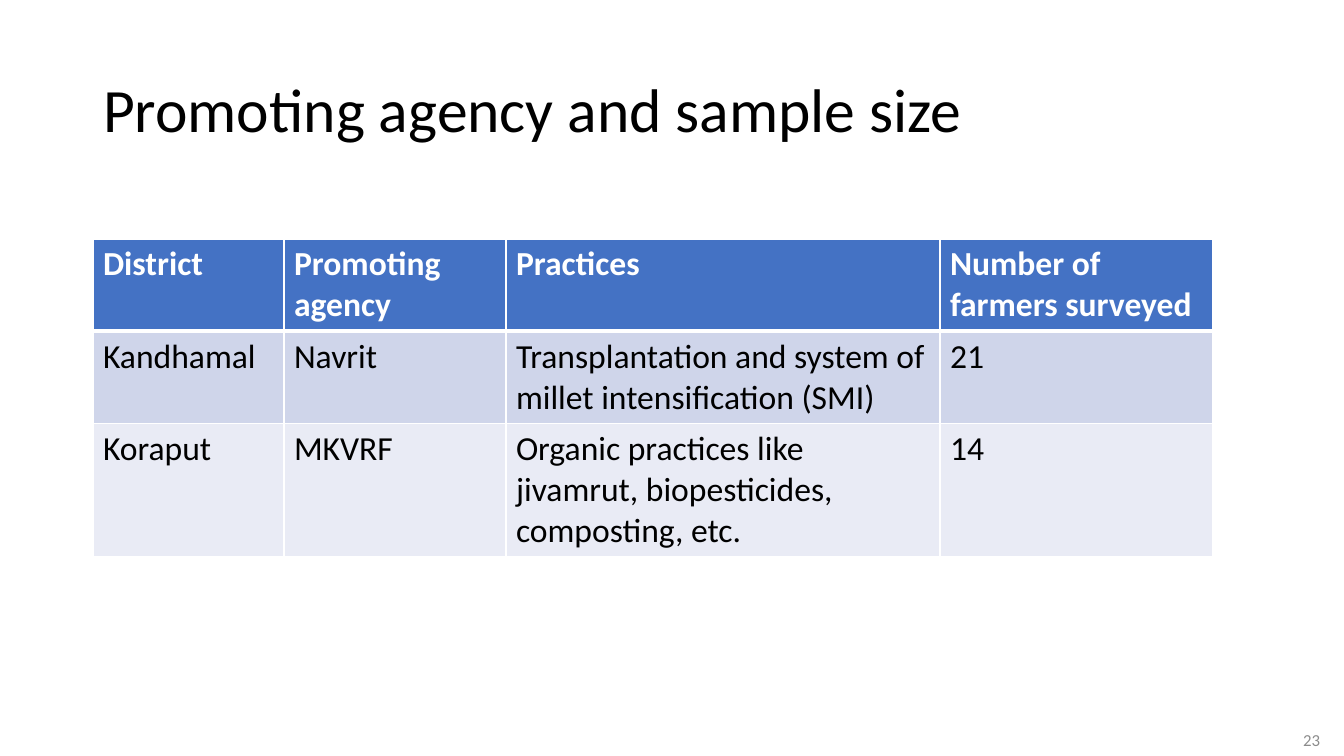
from lxml.etree import SubElement
from pptx import Presentation
from pptx.dml.color import RGBColor
from pptx.enum.text import MSO_ANCHOR, MSO_AUTO_SIZE, PP_ALIGN
from pptx.oxml.ns import qn
from pptx.util import Emu, Pt

FONT = "Calibri"
BLACK = "000000"
WHITE = "FFFFFF"
GREY = "8C8C8C"
HEADER_FILL = "4472C4"
BAND_FILLS = ["CFD5EA", "E9EBF5"]

COLUMN_WIDTHS = [191, 222, 434, 273]
ROW_HEIGHTS = [91, 92, 133]
SURVEY_ROWS = [
    ["District", "Promoting agency", "Practices", "Number of farmers surveyed"],
    ["Kandhamal", "Navrit",
     "Transplantation and system of millet intensification (SMI)", "21"],
    ["Koraput", "MKVRF",
     "Organic practices like jivamrut, biopesticides, composting, etc.", "14"],
]


def px(length):
    """Turn px into EMU, at 100.8 px to the inch."""
    return Emu(round(length * 914400 / 100.8))


def color(hex_string):
    return RGBColor.from_string(hex_string)


def write(text_frame, text, size, text_color, bold=False, align=PP_ALIGN.LEFT):
    paragraph = text_frame.paragraphs[0]
    paragraph.alignment = align
    run = paragraph.add_run()
    run.text = text
    run.font.name = FONT
    run.font.size = Pt(size)
    run.font.bold = bold
    run.font.color.rgb = color(text_color)
    return paragraph


def place(shape, left, top, width, height):
    shape.left, shape.top = px(left), px(top)
    shape.width, shape.height = px(width), px(height)


def fill_title(slide, text):
    title = slide.shapes.title
    place(title, 93, 40, 1159, 146)
    text_frame = title.text_frame
    text_frame.auto_size = MSO_AUTO_SIZE.NONE
    text_frame.vertical_anchor = MSO_ANCHOR.MIDDLE
    write(text_frame, text, 44, BLACK).line_spacing = 0.9


def add_slide_number(slide, number):
    box = slide.shapes.add_textbox(px(1028), px(720), px(302), px(40))
    box.text_frame.word_wrap = True
    box.text_frame.vertical_anchor = MSO_ANCHOR.MIDDLE
    write(box.text_frame, number, 12, GREY, align=PP_ALIGN.RIGHT)


def add_border(cell, side, width):
    line = SubElement(cell._tc.get_or_add_tcPr(), qn(f"a:ln{side}"), w=str(Pt(width)))
    SubElement(SubElement(line, qn("a:solidFill")), qn("a:srgbClr"), val=WHITE)


def format_cell(cell, text, row_index):
    is_header = row_index == 0
    border_widths = {
        "L": 1,
        "R": 1,
        "T": 3 if row_index == 1 else 1,
        "B": 3 if is_header else 1,
    }
    for side, width in border_widths.items():
        add_border(cell, side, width)
    cell.fill.solid()
    cell.fill.fore_color.rgb = color(
        HEADER_FILL if is_header else BAND_FILLS[(row_index - 1) % 2])
    write(cell.text_frame, text, 24, WHITE if is_header else BLACK, bold=is_header)


def add_survey_table(slide, left, top):
    table = slide.shapes.add_table(
        len(ROW_HEIGHTS), len(COLUMN_WIDTHS), px(left), px(top),
        px(sum(COLUMN_WIDTHS)), px(sum(ROW_HEIGHTS))).table
    for column, width in zip(table.columns, COLUMN_WIDTHS):
        column.width = px(width)
    for row_index, (row, height) in enumerate(zip(table.rows, ROW_HEIGHTS)):
        row.height = px(height)
        for cell, text in zip(row.cells, SURVEY_ROWS[row_index]):
            format_cell(cell, text, row_index)


def main():
    presentation = Presentation()
    presentation.slide_width, presentation.slide_height = px(1344), px(756)
    slide = presentation.slides.add_slide(
        presentation.slide_layouts.get_by_name("Title Only"))
    fill_title(slide, "Promoting agency and sample size")
    add_survey_table(slide, 93, 239)
    add_slide_number(slide, "23")
    presentation.save("out.pptx")


if __name__ == "__main__":
    main()
